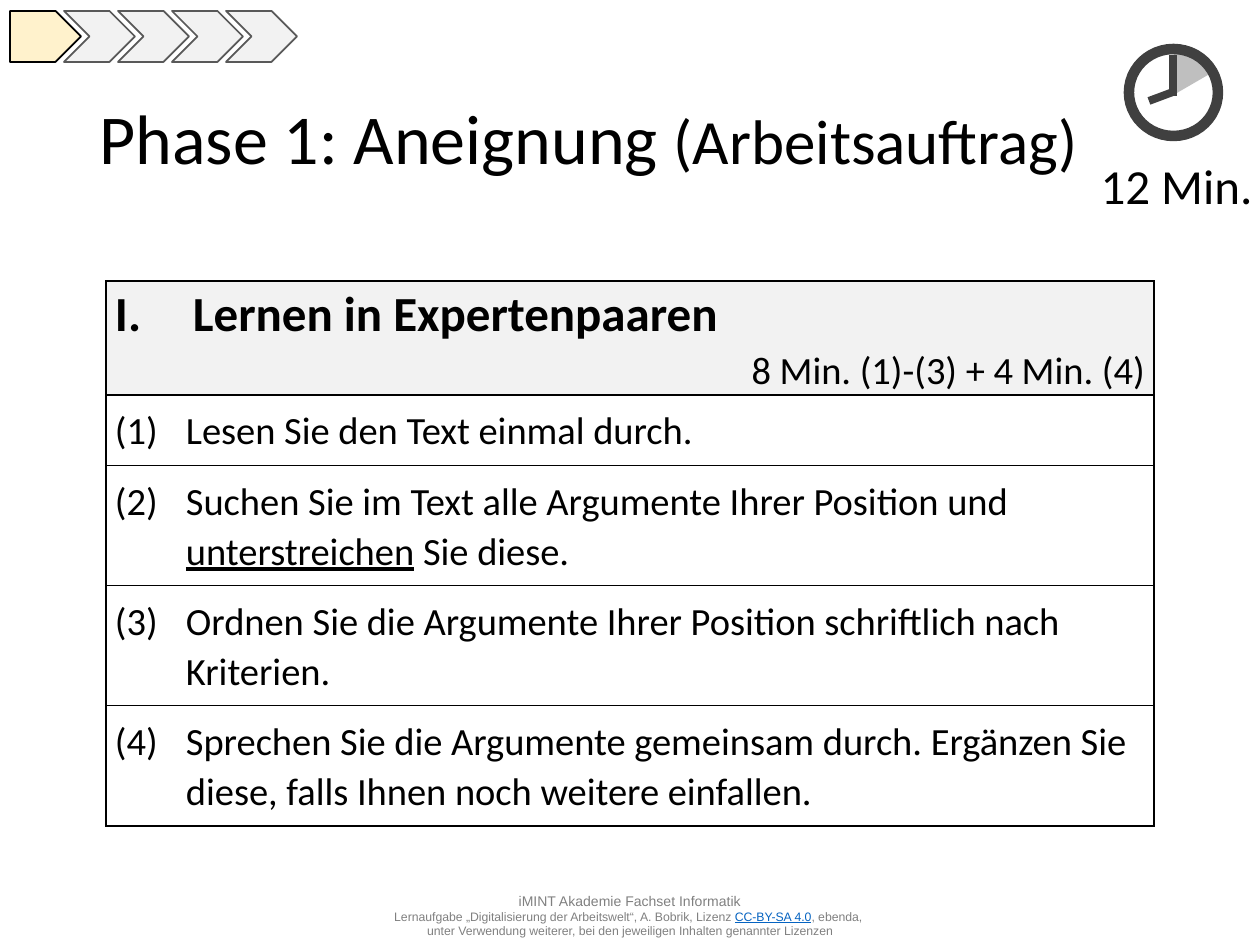
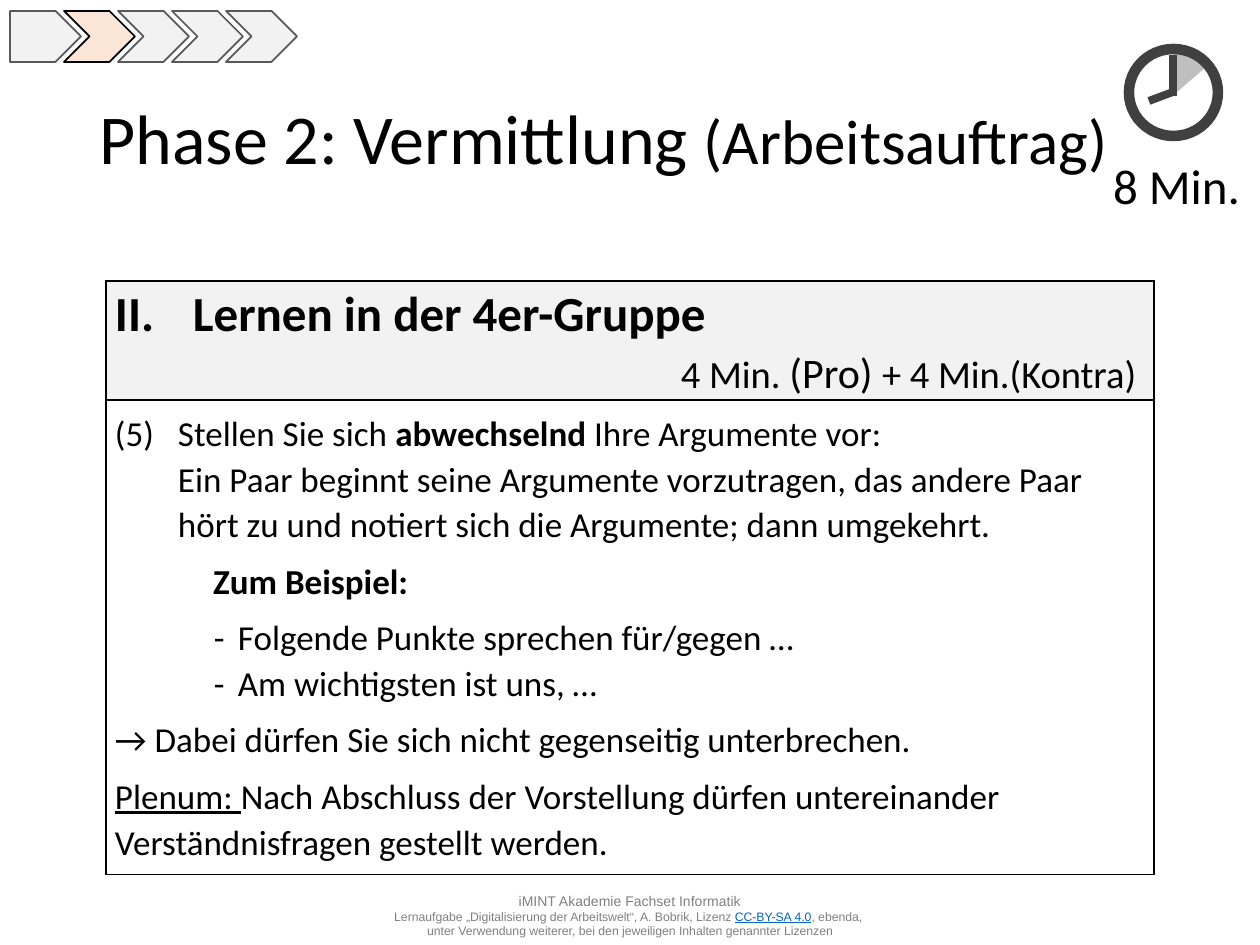
"""Builds two work-assignment slides with phase arrows, a clock and a task table."""
from copy import deepcopy

from lxml import etree
from pptx import Presentation
from pptx.dml.color import RGBColor
from pptx.enum.shapes import MSO_CONNECTOR, MSO_SHAPE
from pptx.enum.text import MSO_ANCHOR, MSO_AUTO_SIZE, PP_ALIGN
from pptx.oxml.ns import qn
from pptx.util import Pt

PX = 7257
STRAIGHT = MSO_CONNECTOR.STRAIGHT
HOME_PLATE, CHEVRON = MSO_SHAPE.PENTAGON, MSO_SHAPE.CHEVRON
PIE, OVAL = MSO_SHAPE.PIE, MSO_SHAPE.OVAL
LEFT, CENTER, RIGHT = PP_ALIGN.LEFT, PP_ALIGN.CENTER, PP_ALIGN.RIGHT
MIDDLE = MSO_ANCHOR.MIDDLE
NO_FIT, GROW = MSO_AUTO_SIZE.NONE, MSO_AUTO_SIZE.SHAPE_TO_FIT_TEXT

BLACK, WHITE, PALE, OUTLINE = "000000", "FFFFFF", "F2F2F2", "595959"
CLOCK, WEDGE, CREDIT, LINK = "404040", "BFBFBF", "808080", "0563C1"
PHASE_COUNT = 5


def paint(fill, color):
    """Make a fill solid in the given hex colour."""
    fill.solid()
    fill.fore_color.rgb = RGBColor.from_string(color)


def write(paragraph, pieces, font="Calibri", color=BLACK):
    """Add (text, size, marks) pieces as runs, with a line break at each newline."""
    for text, size, marks in pieces:
        for number, line in enumerate(text.split("\n")):
            if number:
                paragraph.add_line_break()
                paragraph._p[-1].append(deepcopy(run._r.rPr))
            if line:
                run = paragraph.add_run()
                run.text = line
                run.font.name, run.font.size = font, Pt(size)
                run.font.bold = "b" in marks
                run.font.underline = "u" in marks
                paint(run.font.fill, LINK if "link" in marks else color)


# Each paragraph: pieces, left margin, indent, space before, space after, bullet, start
phases = [
    {
        "title": "Phase 1: Aneignung ", "minutes": "12 Min.",
        "highlight": "FFF2CC", "wedge_end": 162.44,
        "heading": "Lernen in Expertenpaaren",
        "timing": [("8 Min. (1)-(3) + 4 Min. (4)", 22, "")],
        "row_heights": [114, 70, 120, 120, 120],
        "tasks": [
            [(pieces, 71, -71, 6, 6, "arabicParenBoth", start)]
            for start, pieces in enumerate([
                [("Lesen Sie den Text einmal durch.", 22, "")],
                [("Suchen Sie im Text alle Argumente Ihrer Position und ", 22, ""),
                 ("unterstreichen", 22, "u"), (" Sie diese.", 22, "")],
                [("Ordnen Sie die Argumente Ihrer Position schriftlich nach Kriterien.", 22, "")],
                [("Sprechen Sie die Argumente gemeinsam durch. Ergänzen Sie diese, "
                  "falls Ihnen noch weitere einfallen.", 22, "")],
            ], 1)
        ],
    },
    {
        "title": "Phase 2: Vermittlung ", "minutes": "8 Min.",
        "highlight": "FBE5D6", "wedge_end": 156.06,
        "heading": "Lernen in der 4er-Gruppe",
        "timing": [("4 Min. ", 22, ""), ("(Pro) ", 24, ""), ("+ 4 Min.(Kontra) ", 22, "")],
        "row_heights": [119, 474],
        "tasks": [[
            ([("Stellen Sie sich ", 20, ""), ("abwechselnd", 20, "b"),
              (" Ihre Argumente vor: \nEin Paar beginnt seine Argumente vorzutragen, das andere "
               "Paar hört zu und notiert sich die Argumente; dann umgekehrt.", 20, "")],
             63, -63, 6, 6, "arabicParenBoth", 5),
            ([("Zum Beispiel:", 20, "b")], 0, 98, 0, 6, None, 0),
            ([("Folgende Punkte sprechen für/gegen …", 20, "")], 123, -24, 0, 0, "-", 0),
            ([("Am wichtigsten ist uns, …", 20, "")], 123, -24, 0, 0, "-", 0),
            ([("→ Dabei dürfen Sie sich nicht gegenseitig unterbrechen.", 20, "")],
             0, 0, 6, 6, None, 0),
            ([("Plenum: ", 20, "u"),
              ("Nach Abschluss der Vorstellung dürfen untereinander Verständnisfragen "
               "gestellt werden.", 20, "")], 0, 0, 0, 6, None, 0),
        ]],
    },
]
credits = [
    ("iMINT Akademie Fachset Informatik\n", 8, ""),
    ("Lernaufgabe „Digitalisierung der Arbeitswelt“, A. Bobrik, Lizenz ", 7, ""),
    ("CC-BY-SA 4.0", 7, "u link"),
    (", ebenda, \nunter Verwendung weiterer, bei den jeweiligen Inhalten genannter Lizenzen", 7, ""),
]

prs = Presentation()
prs.slide_width, prs.slide_height = 1260 * PX, 945 * PX

for phase_number, phase in enumerate(phases, 1):
    slide = prs.slides.add_slide(prs.slide_layouts[5])

    title = slide.shapes.title
    title.left, title.top, title.width, title.height = (v * PX for v in (87, 50, 1086, 183))
    title.text_frame.auto_size = NO_FIT
    title.text_frame.vertical_anchor = MIDDLE
    headline = title.text_frame.paragraphs[0]
    headline.alignment, headline.line_spacing = LEFT, 0.9
    write(headline, [(phase["title"], 40, ""), ("(Arbeitsauftrag)", 36, "")])

    heights = phase["row_heights"]
    table = slide.shapes.add_table(
        len(heights), 1, 106 * PX, 281 * PX, 1048 * PX, sum(heights) * PX).table
    table.first_row = table.horz_banding = False
    header = [([(phase["heading"], 28, "b")], 78, -78, 6, 0, "romanUcPeriod", phase_number),
              (phase["timing"], 0, 0, 0, 6, None, 0)]
    for row, (height, content) in enumerate(zip(heights, [header] + phase["tasks"])):
        table.rows[row].height = height * PX
        cell = table.cell(row, 0)
        cell.margin_left = cell.margin_right = 9 * PX
        cell.margin_top = cell.margin_bottom = (10 if row else 0) * PX
        for side in ("a:lnL", "a:lnR", "a:lnT", "a:lnB"):
            border = etree.SubElement(cell._tc.get_or_add_tcPr(), qn(side), w=str(Pt(1)))
            solid = etree.SubElement(border, qn("a:solidFill"))
            etree.SubElement(solid, qn("a:srgbClr"), val=BLACK)
        paint(cell.fill, WHITE if row else PALE)
        for index, (pieces, margin, indent, before, after, bullet, start) in enumerate(content):
            frame = cell.text_frame
            paragraph = frame.add_paragraph() if index else frame.paragraphs[0]
            paragraph.alignment = RIGHT if row == 0 and index else LEFT
            paragraph.line_spacing = 1.07
            paragraph.space_before, paragraph.space_after = Pt(before), Pt(after)
            properties = paragraph._p.get_or_add_pPr()
            properties.set("marL", str(margin * PX))
            properties.set("indent", str(indent * PX))
            if bullet == "-":
                etree.SubElement(properties, qn("a:buFont"), typeface="Calibri")
                etree.SubElement(properties, qn("a:buChar"), char=bullet)
            elif bullet:
                etree.SubElement(properties, qn("a:buAutoNum"), type=bullet, startAt=str(start))
            write(paragraph, pieces)

    progress = slide.shapes.add_group_shape()
    for step in range(PHASE_COUNT):
        arrow = progress.shapes.add_shape(
            CHEVRON if step else HOME_PLATE, (10 + 54 * step) * PX, 11 * PX, 71 * PX, 51 * PX)
        current = step == phase_number - 1
        arrow.shadow.inherit = False
        paint(arrow.fill, phase["highlight"] if current else PALE)
        paint(arrow.line.fill, BLACK if current else OUTLINE)
        arrow.line.width = Pt(1)

    for box, pieces, font, color in (
            ((1065, 149, 223, 72), [(phase["minutes"], 28, "")], "Calibri", BLACK),
            ((315, 886, 630, 59), credits, "Arial", CREDIT)):
        label = slide.shapes.add_textbox(*(v * PX for v in box)).text_frame
        label.word_wrap, label.auto_size = True, GROW
        label.paragraphs[0].alignment = CENTER
        write(label.paragraphs[0], pieces, font, color)

    clock = slide.shapes.add_group_shape()
    wedge = clock.shapes.add_shape(PIE, *(v * PX for v in (1130, 53, 87, 84)))
    wedge.rotation = 59.2
    wedge.adjustments[0], wedge.adjustments[1] = 126.54, phase["wedge_end"]
    wedge.shadow.inherit = False
    paint(wedge.fill, WEDGE)
    wedge.line.fill.background()
    rim = clock.shapes.add_shape(OVAL, *(v * PX for v in (1129, 49, 89, 87)))
    rim.shadow.inherit = False
    rim.fill.background()
    paint(rim.line.fill, CLOCK)
    rim.line.width = Pt(6)
    for ends in ((1173, 92, 1149, 101), (1173, 96, 1173, 55)):
        hand = clock.shapes.add_connector(STRAIGHT, *(v * PX for v in ends))
        paint(hand.line.fill, CLOCK)
        hand.line.width = Pt(4.5)
        etree.SubElement(hand._element.spPr, qn("a:effectLst"))

prs.save("out.pptx")
